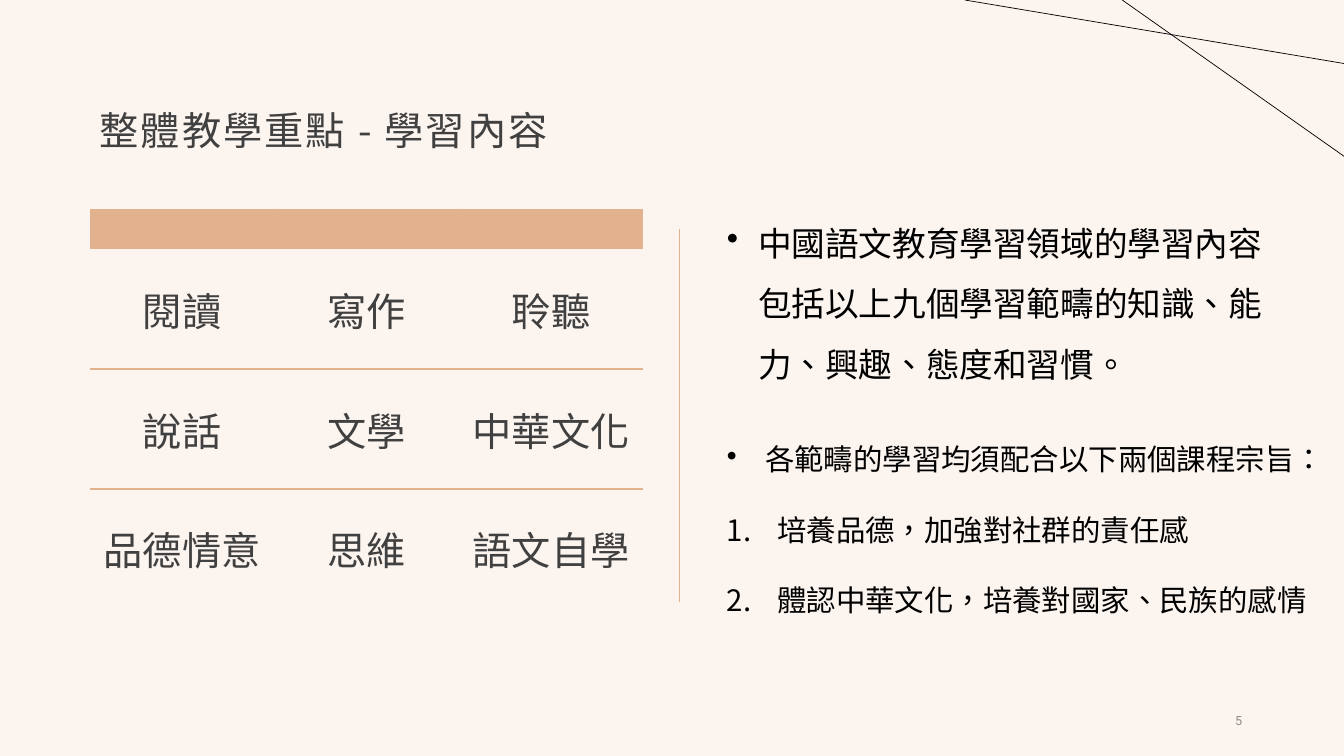
"""Build the slide on learning content across the nine strands of Chinese."""
from dataclasses import dataclass

from lxml import etree
from pptx import Presentation
from pptx import util as u
from pptx.dml.color import RGBColor
from pptx.enum import shapes, text
from pptx.oxml import ns

WIDTH, HEIGHT = u.Inches(13.33), u.Inches(7.5)
COLORS = {"paper": "FBF4EF", "accent": "E2B18D", "heading": "404040", "ink": "000000", "muted": "8C8C8C"}
CJK, LATIN = "Noto Sans CJK TC", "Roboto"
BULLET = ("a:buChar", {"char": "•"})
NUMBER = ("a:buAutoNum", {"type": "arabicPeriod"})

STRANDS = (("閱讀", "寫作", "聆聽"), ("說話", "文學", "中華文化"), ("品德情意", "思維", "語文自學"))
TABLE_LEFT, TABLE_TOP, COLUMN_SHARE = 6.68, 27.6, 13.73
HEADER_SHARE, ROW_SHARE = 5.33, 15.87


@dataclass(frozen=True)
class Line:
    """A straight line, its ends given as percentages of the slide."""
    start: tuple[float, float]
    end: tuple[float, float]
    color: str
    weight: float


@dataclass(frozen=True)
class Item:
    """A paragraph with an optional marker and its hanging indent in inches."""
    wording: str
    marker: tuple | None = None
    hang: float = 0


@dataclass(frozen=True)
class Passage:
    """A text box, placed by percentages of the slide."""
    area: tuple[float, float, float, float]
    items: tuple[Item, ...]
    size: float
    color: str
    face: str = CJK
    spacing: float = 1.0
    tracking: int = 0
    align: text.PP_ALIGN = text.PP_ALIGN.LEFT
    anchor: text.MSO_ANCHOR = text.MSO_ANCHOR.TOP
    fit: text.MSO_AUTO_SIZE = text.MSO_AUTO_SIZE.NONE


LINES = (
    Line((83.5, 0), (100, 20.67), "ink", 0.5),
    Line((71.79, 0), (100, 8.4), "ink", 0.5),
    Line((50.56, 79.6), (50.56, 30.27), "accent", 0.75),
)
PASSAGES = (
    Passage((70.67, 92.67, 22.5, 5.33), (Item("5"),), 9, "muted", LATIN,
            align=text.PP_ALIGN.RIGHT, anchor=text.MSO_ANCHOR.MIDDLE),
    Passage((6.68, 12.53, 49.8, 10), (Item("整體教學重點 - 學習內容"),), 28, "heading",
            spacing=0.9, tracking=150, anchor=text.MSO_ANCHOR.MIDDLE),
    Passage((53.34, 26.13, 42.61, 24.53),
            (Item("中國語文教育學習領域的學習內容包括以上九個學習範疇的知識、能力、興趣、態度和習慣。", BULLET, 0.31),),
            24, "ink", spacing=1.5, fit=text.MSO_AUTO_SIZE.SHAPE_TO_FIT_TEXT),
    Passage((53.34, 53.07, 44.86, 28.13),
            (Item("各範疇的學習均須配合以下兩個課程宗旨：", BULLET, 0.38),
             Item("培養品德，加強對社群的責任感", NUMBER, 0.5),
             Item("體認中華文化，培養對國家、⺠族的感情", NUMBER, 0.5)),
            21, "ink", spacing=2.0, fit=text.MSO_AUTO_SIZE.SHAPE_TO_FIT_TEXT),
)


def across(share: float) -> int:
    """Turn a percentage of the slide width into a length."""
    return round(WIDTH * share / 100)


def down(share: float) -> int:
    """Turn a percentage of the slide height into a length."""
    return round(HEIGHT * share / 100)


def rgb(name: str) -> RGBColor:
    """Look up a named colour."""
    return RGBColor.from_string(COLORS[name])


def apply(target, formats: dict) -> None:
    """Set each format value on the target."""
    for key, value in formats.items():
        setattr(target, key, value)


def write(paragraph, wording: str, size: float, color: str, face: str = CJK, tracking: int = 0) -> None:
    """Add one run, with the same face for Latin and East Asian letters."""
    run = paragraph.add_run()
    run.text = wording
    apply(run.font, {"size": u.Pt(size), "name": face})
    run.font.color.rgb = rgb(color)
    properties = run.font._element
    properties.set("lang", "zh-TW")
    if tracking:
        properties.set("spc", str(tracking))
    etree.SubElement(properties, ns.qn("a:ea"), typeface=face)


def draw_line(slide, line: Line) -> None:
    """Draw a plain line without a shadow."""
    connector = slide.shapes.add_connector(
        shapes.MSO_CONNECTOR.STRAIGHT, across(line.start[0]), down(line.start[1]),
        across(line.end[0]), down(line.end[1]))
    connector.line.color.rgb = rgb(line.color)
    connector.line.width = u.Pt(line.weight)
    etree.SubElement(connector._element.spPr, ns.qn("a:effectLst"))


def draw_passage(slide, passage: Passage) -> None:
    """Draw a text box with its paragraphs and markers."""
    left, top, width, height = passage.area
    frame = slide.shapes.add_textbox(across(left), down(top), across(width), down(height)).text_frame
    apply(frame, {"word_wrap": True, "auto_size": passage.fit, "vertical_anchor": passage.anchor})
    for index, item in enumerate(passage.items):
        paragraph = frame.add_paragraph() if index else frame.paragraphs[0]
        apply(paragraph, {"alignment": passage.align, "line_spacing": passage.spacing})
        write(paragraph, item.wording, passage.size, passage.color, passage.face, passage.tracking)
        if item.marker:
            tag, attributes = item.marker
            properties = paragraph._p.get_or_add_pPr()
            hang = u.Inches(item.hang)
            for key, value in {"marL": hang, "indent": -hang, "hangingPunct": 1}.items():
                properties.set(key, str(value))
            etree.SubElement(properties, ns.qn(tag), attributes)


def rule_cell(cell, ruled: set[str]) -> None:
    """Give the named sides an accent rule and clear the others."""
    properties = cell._tc.get_or_add_tcPr()
    for side in "LRTB":
        border = etree.SubElement(properties, ns.qn(f"a:ln{side}"), w=str(u.Pt(1)))
        if side in ruled:
            fill = etree.SubElement(border, ns.qn("a:solidFill"))
            etree.SubElement(fill, ns.qn("a:srgbClr"), val=COLORS["accent"])
        else:
            etree.SubElement(border, ns.qn("a:noFill"))


def draw_strands(slide) -> None:
    """Draw the table of nine strands under an empty coloured header."""
    count, last = len(STRANDS[0]), len(STRANDS)
    table = slide.shapes.add_table(
        last + 1, count, across(TABLE_LEFT), down(TABLE_TOP), across(COLUMN_SHARE * count),
        down(HEADER_SHARE + ROW_SHARE * last)).table
    apply(table, {"first_row": False, "horz_banding": False})
    for column in table.columns:
        column.width = across(COLUMN_SHARE)
    for index, row in enumerate(table.rows):
        row.height = down(ROW_SHARE if index else HEADER_SHARE)
        for position, cell in enumerate(row.cells):
            if index == 0:
                rule_cell(cell, ({"L"} if position else set()) | ({"R"} if position < count - 1 else set()))
                cell.fill.solid()
                cell.fill.fore_color.rgb = rgb("accent")
                continue
            rule_cell(cell, ({"T"} if index > 1 else set()) | ({"B"} if index < last else set()))
            cell.fill.background()
            cell.vertical_anchor = text.MSO_ANCHOR.MIDDLE
            paragraph = cell.text_frame.paragraphs[0]
            paragraph.alignment = text.PP_ALIGN.CENTER
            write(paragraph, STRANDS[index - 1][position], 28, "heading")


def main() -> None:
    """Assemble and save the slide."""
    deck = Presentation()
    apply(deck, {"slide_width": WIDTH, "slide_height": HEIGHT})
    slide = deck.slides.add_slide(deck.slide_layouts[6])
    slide.background.fill.solid()
    slide.background.fill.fore_color.rgb = rgb("paper")
    for line in LINES:
        draw_line(slide, line)
    for passage in PASSAGES:
        draw_passage(slide, passage)
    draw_strands(slide)
    deck.save("out.pptx")


if __name__ == "__main__":
    main()
